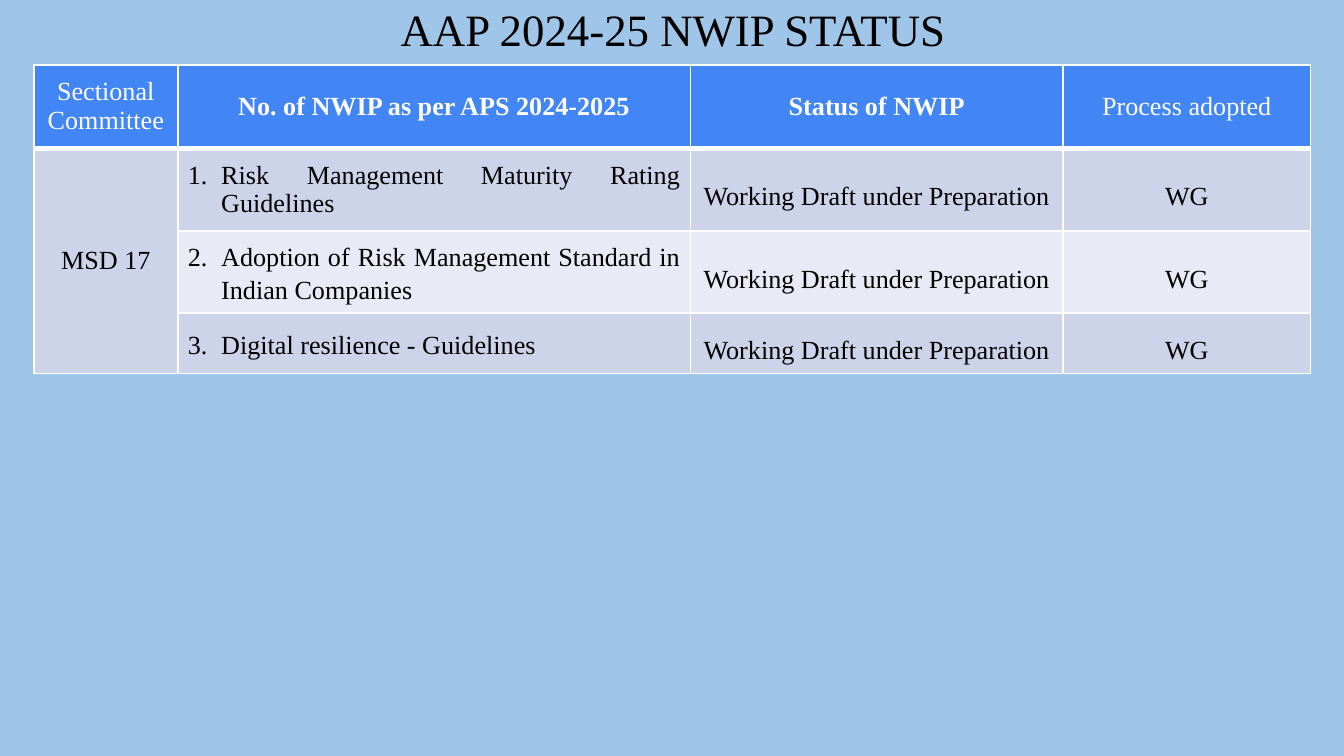
from lxml import etree
from pptx import Presentation
from pptx.dml.color import RGBColor
from pptx.enum import text
from pptx.oxml import ns
from pptx.util import Cm, Pt

FONT = "Times New Roman"
WHITE, BLACK = "FFFFFF", "000000"
ALIGN = text.PP_ALIGN


def paint(fill, color):
    fill.solid()
    fill.fore_color.rgb = RGBColor.from_string(color)


def write(tf, content, size, color, bold=False, align=ALIGN.CENTER, spacing=1.0):
    """Set one formatted paragraph and return it."""
    tf.text = content
    tf.vertical_anchor = text.MSO_ANCHOR.MIDDLE
    p = tf.paragraphs[0]
    p.alignment, p.line_spacing = align, spacing
    for r in p.runs:
        r.font.name, r.font.size, r.font.bold = FONT, Pt(size), bold
        paint(r.font.fill, color)
    return p


prs = Presentation()
prs.slide_width, prs.slide_height = Cm(25.4), Cm(14.29)
s = prs.slides.add_slide(prs.slide_layouts[5])
paint(s.background.fill, "9FC5E8")

title = s.shapes.title
title.left, title.top, title.width, title.height = Cm(0.64), Cm(0), Cm(24.15), Cm(1.22)
tf = title.text_frame
tf.auto_size = text.MSO_AUTO_SIZE.NONE
tf.margin_left = tf.margin_right = Cm(0.19)
tf.margin_top = tf.margin_bottom = Cm(0.1)
write(tf, "AAP 2024-25 NWIP STATUS", 24, BLACK, spacing=0.9)

headers = ["Sectional Committee", "No. of NWIP as per APS 2024-2025",
           "Status of NWIP", "Process adopted"]
items = ["Risk Management Maturity Rating Guidelines",
         "Adoption of Risk Management Standard in Indian Companies",
         "Digital resilience - Guidelines"]
rows = [headers] + [["", item, "Working Draft under Preparation", "WG"] for item in items]
rows[1][0] = "MSD 17"
widths = [2.72, 9.69, 7.04, 4.68]
heights = [1.57, 1.57, 1.55, 1.14]

table = s.shapes.add_table(len(rows), len(headers), Cm(0.64), Cm(1.23),
                           Cm(sum(widths)), Cm(sum(heights))).table
for column, width in zip(table.columns, widths):
    column.width = Cm(width)
for row, height in zip(table.rows, heights):
    row.height = Cm(height)
table.cell(1, 0).merge(table.cell(3, 0))

for i, row in enumerate(rows):
    for j, content in enumerate(row):
        cell = table.cell(i, j)
        cell.margin_left = cell.margin_right = Cm(0.19)
        cell.margin_top = cell.margin_bottom = Cm(0.1)
        cell.vertical_anchor = text.MSO_ANCHOR.MIDDLE
        if i == 0:
            paint(cell.fill, "4285F4")
        else:
            paint(cell.fill, "CDD4EA" if i % 2 or j == 0 else "E8EBF5")

        tcPr = cell._tc.get_or_add_tcPr()
        for k, side in enumerate(["lnL", "lnR", "lnT", "lnB"]):
            under_header = (i, side) in [(0, "lnB"), (1, "lnT")]
            ln = etree.Element(ns.qn("a:" + side), w=str(Pt(3 if under_header else 1)))
            color = etree.SubElement(ln, ns.qn("a:solidFill"))
            etree.SubElement(color, ns.qn("a:srgbClr"), val=WHITE)
            tcPr.insert(k, ln)

        if not content:
            continue
        if i == 0:
            write(cell.text_frame, content, 14, WHITE, bold=j in (1, 2))
        elif j == 1:
            p = write(cell.text_frame, content, 14, BLACK, align=ALIGN.JUSTIFY,
                      spacing=1.0 if i == 1 else 1.15)
            pPr = p._p.get_or_add_pPr()
            pPr.set("marL", str(Cm(0.63)))
            pPr.set("indent", str(-Cm(0.63)))
            color = etree.SubElement(pPr, ns.qn("a:buClr"))
            etree.SubElement(color, ns.qn("a:srgbClr"), val=BLACK)
            etree.SubElement(pPr, ns.qn("a:buFont"), typeface=FONT)
            etree.SubElement(pPr, ns.qn("a:buAutoNum"), type="arabicPeriod", startAt=str(i))
        else:
            write(cell.text_frame, content, 14, BLACK, spacing=1.5 if j else 1.0)

prs.save("out.pptx")
